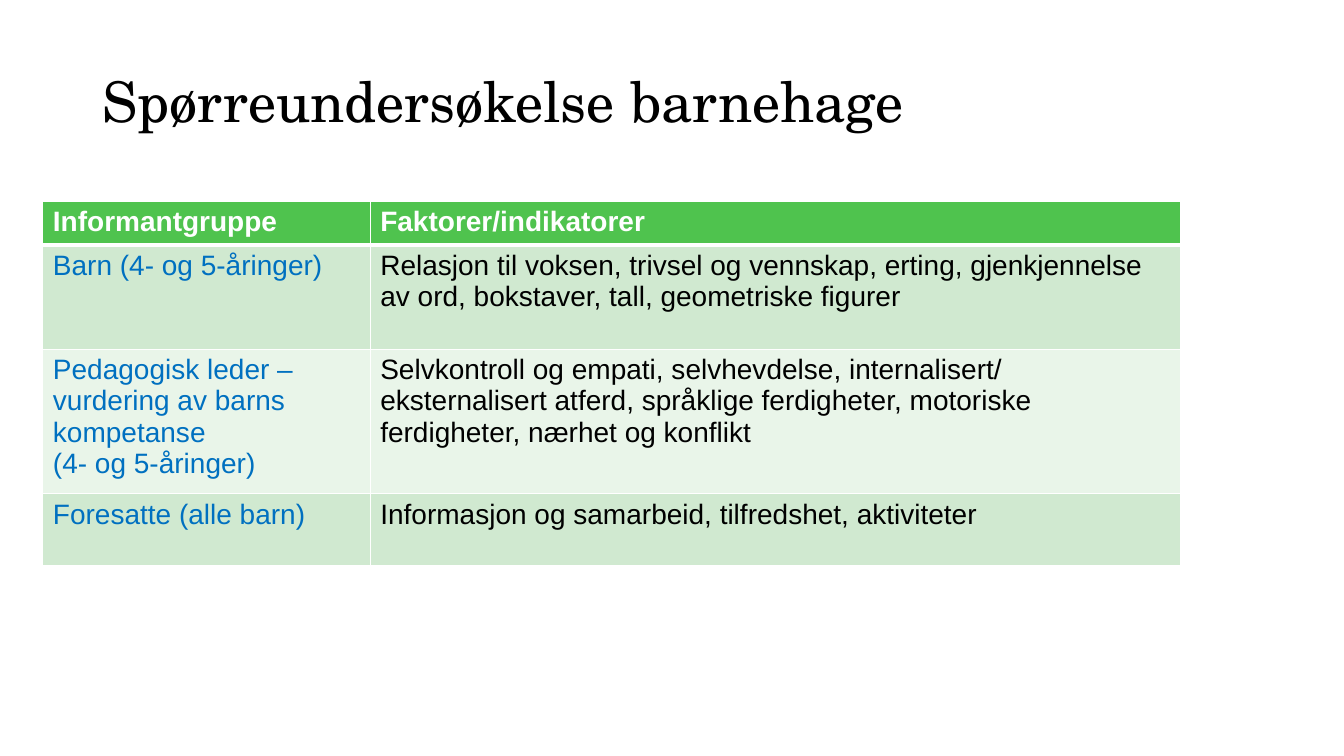
"""Build the slide with the kindergarten survey table."""
from dataclasses import dataclass

from lxml import etree
from pptx import Presentation
from pptx.dml.color import RGBColor
from pptx.enum import text
from pptx.oxml import ns
from pptx.util import Cm, Pt

WHITE = RGBColor(0xFF, 0xFF, 0xFF)
BLACK = RGBColor(0, 0, 0)
BLUE = RGBColor(0x00, 0x70, 0xC0)
GREEN = RGBColor(0x4F, 0xC3, 0x4E)
MID_GREEN = RGBColor(0xD0, 0xE9, 0xD0)
PALE_GREEN = RGBColor(0xE9, 0xF5, 0xE9)
COLUMN_WIDTHS = (8.25, 20.42)


@dataclass
class SurveyRow:
    group: str
    factors: str
    height: float
    fill: RGBColor


ROWS = [
    SurveyRow("Informantgruppe", "Faktorer/indikatorer", 1.03, GREEN),
    SurveyRow(
        "Barn (4- og 5-åringer)",
        "Relasjon til voksen, trivsel og vennskap, erting, gjenkjennelse "
        "av ord, bokstaver, tall, geometriske figurer",
        2.62, MID_GREEN),
    SurveyRow(
        "Pedagogisk leder –vurdering av barns kompetanse \v(4- og 5-åringer)",
        "Selvkontroll og empati, selvhevdelse, internalisert/ eksternalisert "
        "atferd, språklige ferdigheter, motoriske ferdigheter, nærhet og konflikt",
        3.4, PALE_GREEN),
    SurveyRow(
        "Foresatte (alle barn)",
        "Informasjon og samarbeid, tilfredshet, aktiviteter",
        1.8, MID_GREEN),
]


def format_runs(tf, font: str, size: float, color: RGBColor, bold: bool = False) -> None:
    """Give every run in a text frame the same font."""
    for p in tf.paragraphs:
        for r in p.runs:
            r.font.name = font
            r.font.size = Pt(size)
            r.font.bold = bold
            r.font.color.rgb = color


def set_border(cell, side: str, width: float) -> None:
    """Draw one white cell border."""
    tc_pr = cell._tc.get_or_add_tcPr()
    ln = etree.SubElement(tc_pr, ns.qn(f"a:{side}"), w=str(Pt(width)))
    fill = etree.SubElement(ln, ns.qn("a:solidFill"))
    etree.SubElement(fill, ns.qn("a:srgbClr"), val=str(WHITE))


def fill_cell(cell, words: str, row: SurveyRow, color: RGBColor,
              top: float, bottom: float) -> None:
    """Write and colour one table cell."""
    for side, width in (("lnL", 1), ("lnR", 1), ("lnT", top), ("lnB", bottom)):
        set_border(cell, side, width)
    cell.fill.solid()
    cell.fill.fore_color.rgb = row.fill
    tf = cell.text_frame
    tf.text = words
    format_runs(tf, "Arial", 20, color, bold=row.fill == GREEN)


def add_title(s, words: str) -> None:
    """Add the slide title."""
    sp = s.shapes.add_textbox(Cm(2.33), Cm(1.02), Cm(25.9), Cm(2.5))
    tf = sp.text_frame
    tf.word_wrap = True
    tf.vertical_anchor = text.MSO_ANCHOR.BOTTOM
    tf.text = words
    tf.paragraphs[0].line_spacing = 0.9
    format_runs(tf, "TeX Gyre Schola", 40, BLACK)


def add_survey_table(s, rows: list[SurveyRow]) -> None:
    """Add the table of informant groups and factors."""
    height = sum(row.height for row in rows)
    table = s.shapes.add_table(len(rows), len(COLUMN_WIDTHS), Cm(1.08), Cm(5.08),
                               Cm(sum(COLUMN_WIDTHS)), Cm(height)).table
    for column, width in zip(table.columns, COLUMN_WIDTHS):
        column.width = Cm(width)
    for i, row in enumerate(rows):
        table.rows[i].height = Cm(row.height)
        colors = (WHITE, WHITE) if i == 0 else (BLUE, BLACK)
        top, bottom = 3 if i == 1 else 1, 3 if i == 0 else 1
        for j, words in enumerate((row.group, row.factors)):
            fill_cell(table.cell(i, j), words, row, colors[j], top, bottom)


def main() -> None:
    """Create and save the presentation."""
    prs = Presentation()
    prs.slide_width, prs.slide_height = Cm(33.87), Cm(19.05)
    s = prs.slides.add_slide(prs.slide_layouts[6])
    add_title(s, "Spørreundersøkelse barnehage")
    add_survey_table(s, ROWS)
    prs.save("out.pptx")


if __name__ == "__main__":
    main()
